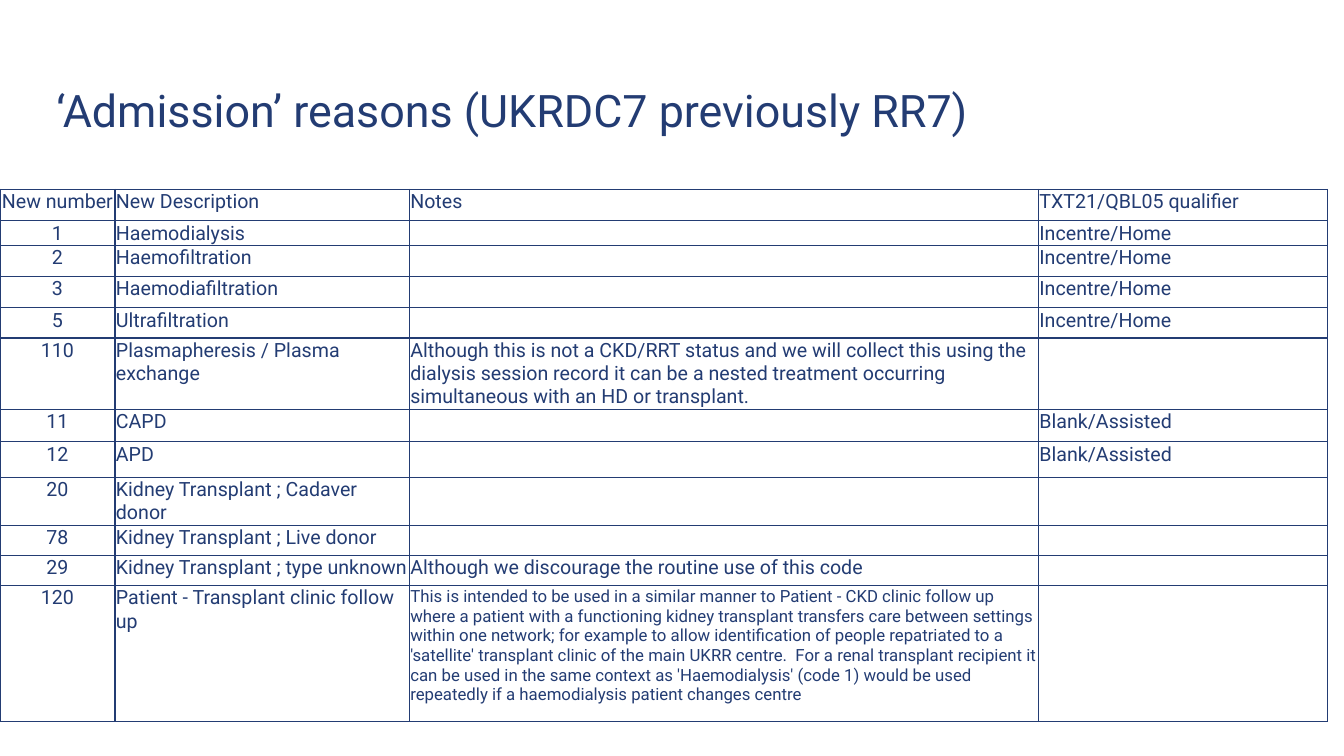
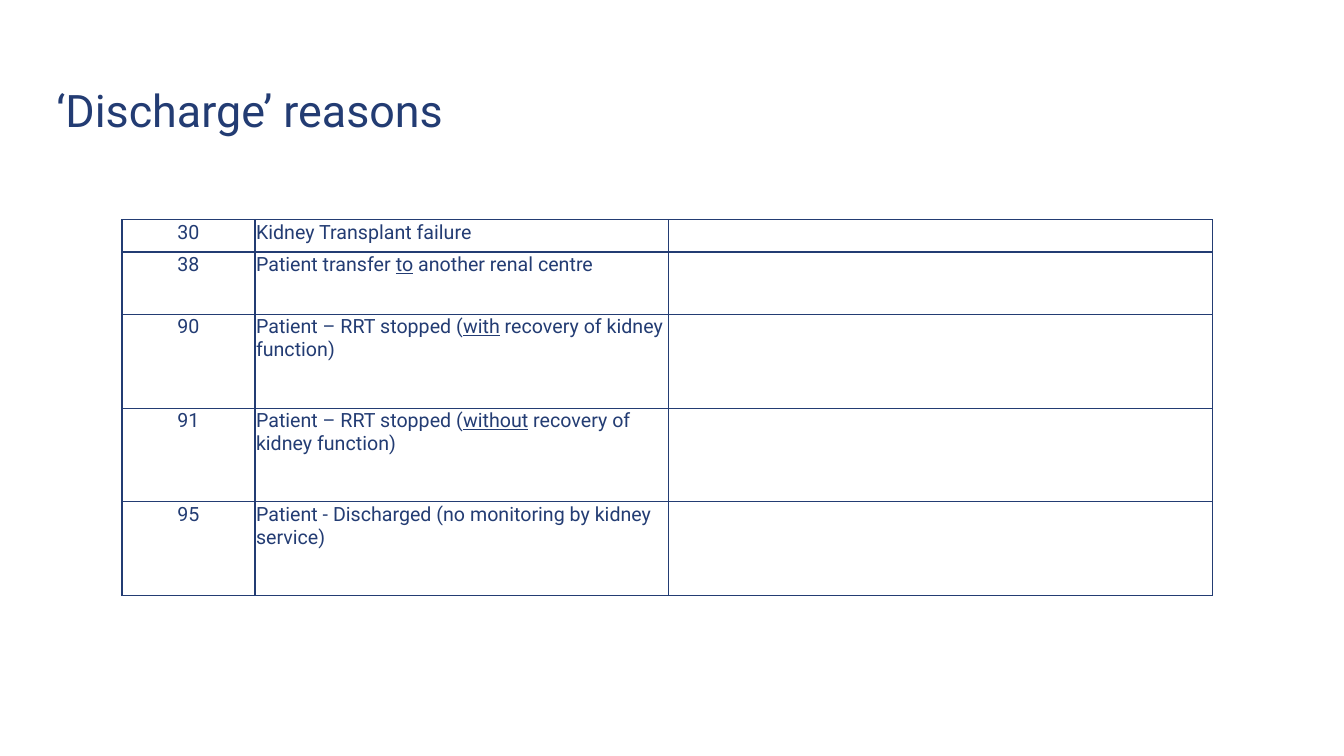
"""Build two slides listing admission and discharge reason codes."""
from lxml import etree
from pptx import Presentation
from pptx.dml.color import RGBColor
from pptx.enum.text import MSO_ANCHOR, PP_ALIGN
from pptx.oxml.ns import qn
from pptx.util import Inches, Pt

MIDDLE, TOP = MSO_ANCHOR.MIDDLE, MSO_ANCHOR.TOP
LEFT, CENTER = PP_ALIGN.LEFT, PP_ALIGN.CENTER
NAVY = RGBColor(0x23, 0x3C, 0x73)
FONT = "Roboto"
TITLE_SIZE, BODY_SIZE, SMALL_SIZE = 32, 14, 12
LONG_NOTE = 200
BORDER = Pt(1)

ADMISSION_ROWS = [
    ("New number", "New Description", "Notes", "TXT21/QBL05 qualifier"),
    ("1", "Haemodialysis", "", "Incentre/Home"),
    ("2", "Haemofiltration", "", "Incentre/Home"),
    ("3", "Haemodiafiltration", "", "Incentre/Home"),
    ("5", "Ultrafiltration", "", "Incentre/Home"),
    ("110", "Plasmapheresis / Plasma exchange",
     "Although this is not a CKD/RRT status and we will collect this using the "
     "dialysis session record it can be a nested treatment occurring "
     "simultaneous with an HD or transplant.", ""),
    ("11", "CAPD", "", "Blank/Assisted"),
    ("12", "APD", "", "Blank/Assisted"),
    ("20", "Kidney Transplant ; Cadaver donor", "", ""),
    ("78", "Kidney Transplant ; Live donor", "", ""),
    ("29", "Kidney Transplant ; type unknown",
     "Although we discourage the routine use of this code", ""),
    ("120", "Patient - Transplant clinic follow up",
     "This is intended to be used in a similar manner to Patient - CKD clinic "
     "follow up where a patient with a functioning kidney transplant transfers "
     "care between settings within one network; for example to allow "
     "identification of people repatriated to a 'satellite' transplant clinic "
     "of the main UKRR centre.  For a renal transplant recipient it can be used "
     "in the same context as 'Haemodialysis' (code 1) would be used repeatedly "
     "if a haemodialysis patient changes centre", ""),
]
DISCHARGE_ROWS = [
    ("30", "Kidney Transplant failure", ""),
    ("38", "Patient transfer _to_ another renal centre", ""),
    ("90", "Patient – RRT stopped (_with_ recovery of kidney function)", ""),
    ("91", "Patient – RRT stopped (_without_ recovery of kidney function)", ""),
    ("95", "Patient - Discharged (no monitoring by kidney service)", ""),
]
SLIDES = [
    {"title": "‘Admission’ reasons (UKRDC7 previously RR7)",
     "rows": ADMISSION_ROWS, "corner": (0, 1.88),
     "widths": [1.14, 2.92, 6.24, 2.87],
     "heights": [0.31, 0.24, 0.31, 0.31, 0.3, 0.69,
                 0.32, 0.35, 0.47, 0.3, 0.3, 1.35]},
    {"title": "‘Discharge’ reasons",
     "rows": DISCHARGE_ROWS, "corner": (1.21, 2.18),
     "widths": [1.32, 4.1, 5.4],
     "heights": [0.32, 0.62, 0.93, 0.93, 0.93]},
]


def add_text(paragraph, text, size):
    """Add text run by run, underlining what stands between underscores."""
    for index, part in enumerate(text.split("_")):
        run = paragraph.add_run()
        run.text = part
        run.font.name = FONT
        run.font.size = Pt(size)
        run.font.bold = False
        run.font.color.rgb = NAVY
        if index % 2:
            run.font.underline = True


def add_title(slide, title):
    """Add the slide title."""
    box = slide.shapes.add_textbox(
        Inches(0.56), Inches(0.4), Inches(10.43), Inches(1.38))
    frame = box.text_frame
    frame.word_wrap = True
    frame.vertical_anchor = MIDDLE
    frame.margin_left = frame.margin_right = 0
    frame.margin_top = frame.margin_bottom = 0
    add_text(frame.paragraphs[0], title, TITLE_SIZE)


def add_borders(cell):
    """Draw a navy line on every side of a cell."""
    properties = cell._tc.get_or_add_tcPr()
    for position, side in enumerate(("a:lnL", "a:lnR", "a:lnT", "a:lnB")):
        line = etree.Element(qn(side), w=str(BORDER))
        fill = etree.SubElement(line, qn("a:solidFill"))
        etree.SubElement(fill, qn("a:srgbClr"), val=str(NAVY))
        properties.insert(position, line)


def fill_cell(cell, text, alignment):
    """Style a cell and write its text."""
    cell.margin_left = cell.margin_right = cell.margin_top = Inches(0.01)
    cell.margin_bottom = 0
    cell.vertical_anchor = TOP
    cell.fill.background()
    add_borders(cell)
    paragraph = cell.text_frame.paragraphs[0]
    paragraph.alignment = alignment
    if text:
        add_text(paragraph, text,
                 SMALL_SIZE if len(text) > LONG_NOTE else BODY_SIZE)
    else:
        etree.SubElement(paragraph._p, qn("a:endParaRPr"),
                         sz=str(SMALL_SIZE * 100))


def add_reasons(slide, rows, corner, widths, heights):
    """Add the table of reason codes."""
    left, top = corner
    table = slide.shapes.add_table(
        len(rows), len(widths), Inches(left), Inches(top),
        Inches(sum(widths)), Inches(sum(heights))).table
    table.first_row = table.horz_banding = False
    for column, width in zip(table.columns, widths):
        column.width = Inches(width)
    for row, height, texts in zip(table.rows, heights, rows):
        row.height = Inches(height)
        for index, (cell, text) in enumerate(zip(row.cells, texts)):
            fill_cell(cell, text, LEFT if index else CENTER)


def main():
    """Build and save the presentation."""
    deck = Presentation()
    deck.slide_width, deck.slide_height = Inches(13.33), Inches(7.5)
    for content in SLIDES:
        slide = deck.slides.add_slide(deck.slide_layouts[6])
        add_title(slide, content["title"])
        add_reasons(slide, content["rows"], content["corner"],
                    content["widths"], content["heights"])
    deck.save("out.pptx")


if __name__ == "__main__":
    main()
